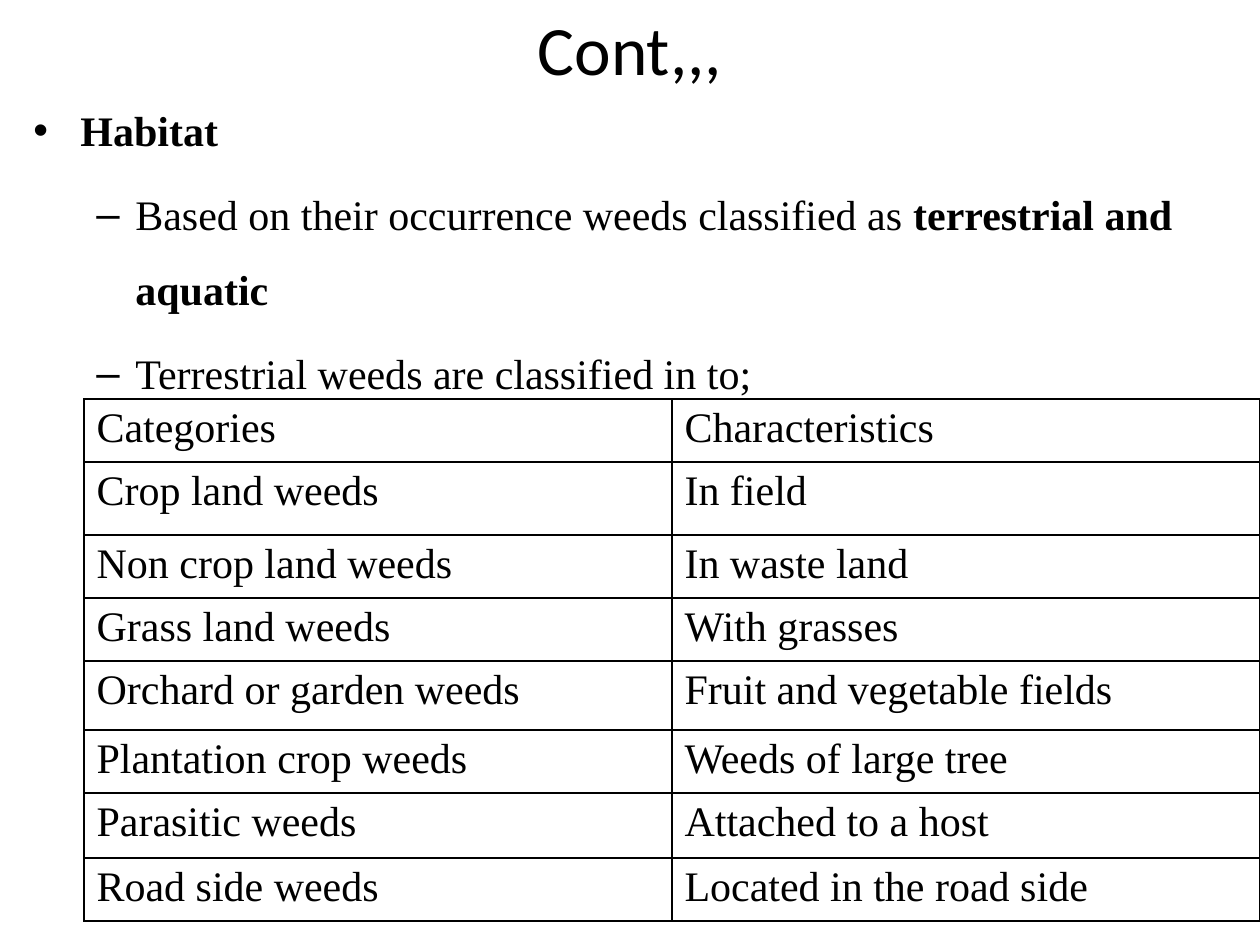
from lxml import etree
from pptx import Presentation
from pptx.dml.color import RGBColor
from pptx.enum.text import MSO_ANCHOR, PP_ALIGN
from pptx.oxml.ns import qn
from pptx.util import Emu, Pt

BLACK = RGBColor(0, 0, 0)
WHITE = RGBColor(255, 255, 255)
CENTER = PP_ALIGN.CENTER
MIDDLE = MSO_ANCHOR.MIDDLE
EMU_PER_INCH = 914400
PX_PER_INCH = 126
BLANK_LAYOUT = 6


def px(length):
    return Emu(round(length * EMU_PER_INCH / PX_PER_INCH))


class SlideBuilder:
    title_font = "Calibri"
    body_font = "Times New Roman"
    body_size = 24
    # Bullet character, left margin and hanging indent for each level
    levels = [("•", 47, 47), ("–", 102, 39)]

    def __init__(self, presentation):
        self.slide = presentation.slides.add_slide(presentation.slide_layouts[BLANK_LAYOUT])
        self.slide.background.fill.solid()
        self.slide.background.fill.fore_color.rgb = WHITE

    def style(self, run, name=body_font, size=body_size, bold=False):
        run.font.name = name
        run.font.size = Pt(size)
        run.font.bold = bold
        run.font.color.rgb = BLACK

    def text_frame(self, left, top, width, height):
        shape = self.slide.shapes.add_textbox(px(left), px(top), px(width), px(height))
        shape.text_frame.word_wrap = True
        return shape.text_frame

    def title(self, text, *box):
        frame = self.text_frame(*box)
        frame.vertical_anchor = MIDDLE
        frame.text = text
        paragraph = frame.paragraphs[0]
        paragraph.alignment = CENTER
        self.style(paragraph.runs[0], self.title_font, 39.6)

    def bullets(self, items, *box):
        frame = self.text_frame(*box)
        for index, (level, parts) in enumerate(items):
            paragraph = frame.add_paragraph() if index else frame.paragraphs[0]
            paragraph.level = level
            paragraph.line_spacing = 1.5
            paragraph.space_before = Pt(self.body_size * 0.2)
            self.bullet(paragraph, *self.levels[level])
            for text, bold in parts:
                run = paragraph.add_run()
                run.text = text
                self.style(run, bold=bold)

    def bullet(self, paragraph, character, margin, hanging):
        properties = paragraph._p.get_or_add_pPr()
        properties.set("marL", str(px(margin)))
        properties.set("indent", str(-px(hanging)))
        etree.SubElement(properties, qn("a:buFont"), typeface="Arial")
        etree.SubElement(properties, qn("a:buChar"), char=character)

    def table(self, rows, left, top, column_width, row_heights):
        columns = len(rows[0])
        frame = self.slide.shapes.add_table(
            len(rows), columns, px(left), px(top),
            px(column_width * columns), px(sum(row_heights)))
        table = frame.table
        for column in table.columns:
            column.width = px(column_width)
        for row, height, texts in zip(table.rows, row_heights, rows):
            row.height = px(height)
            for cell, text in zip(row.cells, texts):
                cell.text = text
                self.style(cell.text_frame.paragraphs[0].runs[0])
                self.borders(cell)
                cell.fill.background()

    def borders(self, cell):
        properties = cell._tc.get_or_add_tcPr()
        for side in ("a:lnL", "a:lnR", "a:lnT", "a:lnB"):
            line = etree.SubElement(properties, qn(side), w=str(Pt(1)))
            fill = etree.SubElement(line, qn("a:solidFill"))
            etree.SubElement(fill, qn("a:srgbClr"), val=str(BLACK))


def main():
    presentation = Presentation()
    presentation.slide_width = px(1260)
    presentation.slide_height = px(945)
    builder = SlideBuilder(presentation)

    # Heading and bullet list
    builder.title("Cont,,,", 63, 0, 1134, 95)
    builder.bullets([
        (0, [("Habitat", True)]),
        (1, [("Based on their occurrence weeds classified as ", False),
             ("terrestrial and aquatic", True)]),
        (1, [("Terrestrial weeds are classified in to;", False)]),
    ], 21, 73, 1239, 819)

    # Terrestrial weed categories
    builder.table([
        ("Categories", "Characteristics"),
        ("Crop land weeds", "In field"),
        ("Non crop land weeds", "In waste land"),
        ("Grass land weeds", "With grasses"),
        ("Orchard or garden weeds", "Fruit and vegetable fields"),
        ("Plantation crop weeds", "Weeds of large tree"),
        ("Parasitic weeds", "Attached to a host"),
        ("Road side weeds", "Located in the road side"),
    ], 84, 399, 588, [59, 73, 59, 59, 69, 59, 65, 59])

    presentation.save("out.pptx")


if __name__ == "__main__":
    main()
